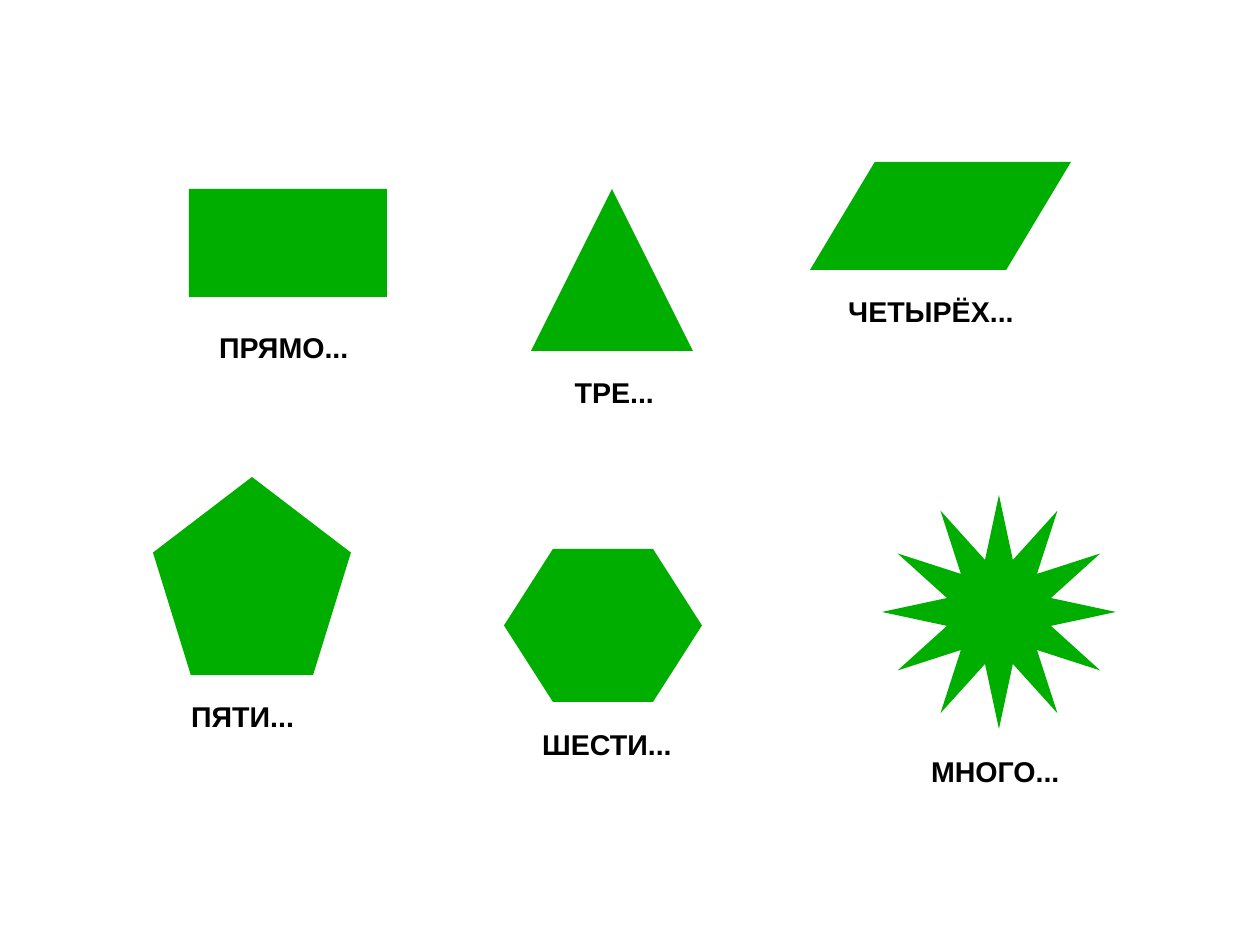
"""Build a slide of six green polygons with the beginnings of their names."""
from dataclasses import dataclass

from pptx import Presentation
from pptx.dml.color import RGBColor
from pptx.enum.shapes import MSO_SHAPE
from pptx.enum.text import MSO_AUTO_SIZE
from pptx.slide import Slide
from pptx.util import Cm, Pt

RECT = MSO_SHAPE.RECTANGLE
TRI = MSO_SHAPE.ISOSCELES_TRIANGLE
SLANT = MSO_SHAPE.PARALLELOGRAM
PENTA = MSO_SHAPE.REGULAR_PENTAGON
HEXA = MSO_SHAPE.HEXAGON
STAR = MSO_SHAPE.STAR_12_POINT
FIT = MSO_AUTO_SIZE.SHAPE_TO_FIT_TEXT
BLANK = 6


@dataclass(frozen=True)
class Theme:
    fill: RGBColor = RGBColor(0x00, 0xAE, 0x00)
    ink: RGBColor = RGBColor(0x00, 0x00, 0x00)
    font: str = "Arial"
    size: Pt = Pt(18)


@dataclass(frozen=True)
class Box:
    left: float
    top: float
    width: float
    height: float = 1.0

    def place(self) -> tuple[Cm, Cm, Cm, Cm]:
        return Cm(self.left), Cm(self.top), Cm(self.width), Cm(self.height)


@dataclass(frozen=True)
class Figure:
    kind: MSO_SHAPE
    area: Box
    name: str
    label: Box
    adjust: float | None = None


THEME = Theme()
FIGURES = [
    Figure(RECT, Box(4.2, 4.2, 4.4, 2.4), "ПРЯМО...", Box(4.62, 7.2, 3.42)),
    Figure(TRI, Box(11.8, 4.2, 3.6, 3.6), "ТРЕ...", Box(12.52, 8.2, 2.32)),
    Figure(SLANT, Box(18, 3.6, 5.8, 2.4), "ЧЕТЫРЁХ...", Box(18.6, 6.4, 4.24), 0.6),
    Figure(PENTA, Box(3.4, 10.6, 4.4, 4.4), "ПЯТИ...", Box(4, 15.4, 2.84)),
    Figure(HEXA, Box(11.2, 12.2, 4.4, 3.4), "ШЕСТИ...", Box(11.8, 16.02, 3.42), 0.32),
    Figure(STAR, Box(19.6, 11, 5.2, 5.2), "МНОГО...", Box(20.44, 16.63, 3.42), 0.23),
]


def draw_shape(slide: Slide, figure: Figure) -> None:
    shape = slide.shapes.add_shape(figure.kind, *figure.area.place())
    if figure.adjust is not None:
        shape.adjustments[0] = figure.adjust
    shape.shadow.inherit = False
    shape.fill.solid()
    shape.fill.fore_color.rgb = THEME.fill
    shape.line.fill.background()


def draw_label(slide: Slide, figure: Figure) -> None:
    frame = slide.shapes.add_textbox(*figure.label.place()).text_frame
    frame.text = figure.name
    frame.word_wrap = False
    frame.auto_size = FIT
    font = frame.paragraphs[0].runs[0].font
    font.name = THEME.font
    font.size = THEME.size
    font.bold = True
    font.color.rgb = THEME.ink


def main() -> None:
    deck = Presentation()
    deck.slide_width, deck.slide_height = Cm(28), Cm(21)
    slide = deck.slides.add_slide(deck.slide_layouts[BLANK])
    for figure in FIGURES:
        draw_shape(slide, figure)
        draw_label(slide, figure)
    deck.save("out.pptx")


if __name__ == "__main__":
    main()
